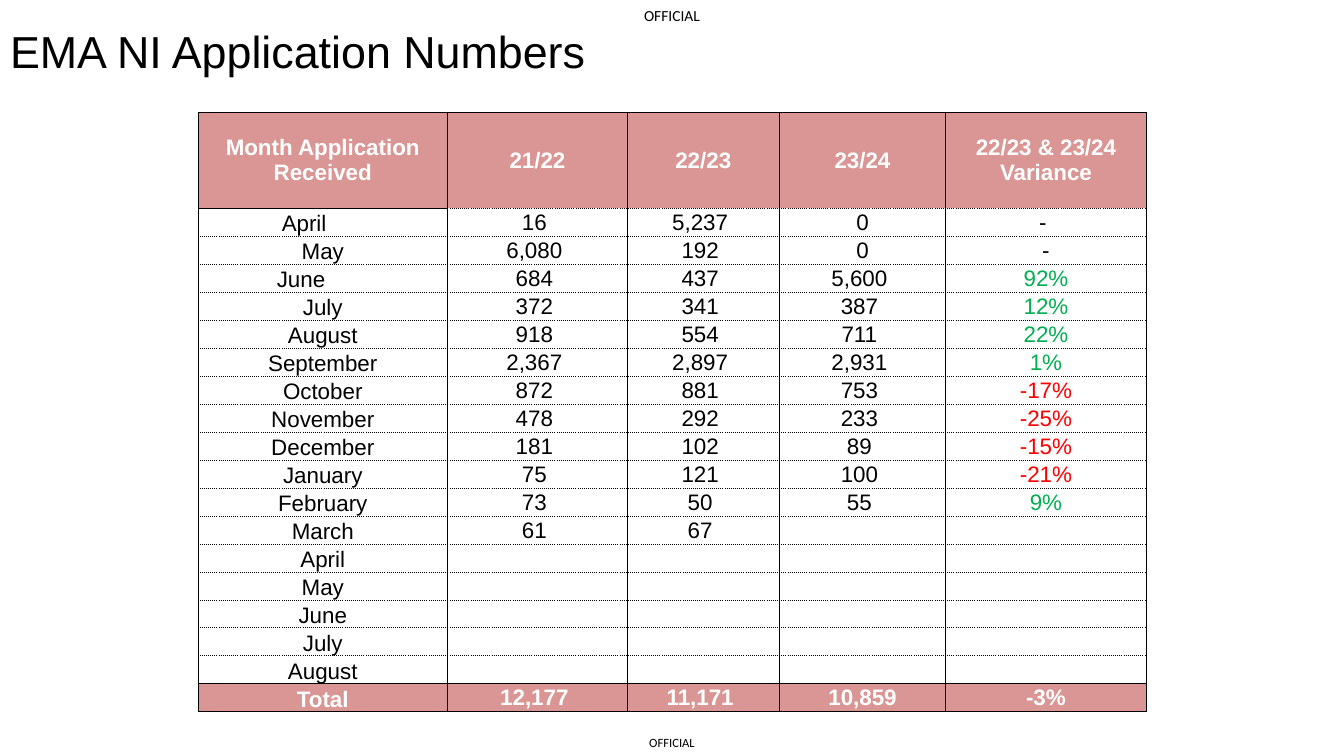
from lxml.etree import SubElement
from pptx import Presentation
from pptx.dml.color import RGBColor
from pptx.enum.text import MSO_ANCHOR as Anchor, MSO_AUTO_SIZE as Fit, PP_ALIGN as Align
from pptx.oxml.ns import qn
from pptx.util import Pt


def style(para, align, bold=False, size=16, name="Arial", hue="000000"):
    para.alignment = align
    for run in para.runs:
        for key, val in {"size": Pt(size), "name": name, "bold": bold}.items():
            setattr(run.font, key, val)
        run.font.color.rgb = RGBColor.from_string(hue)


def edge(cell, side, dash):
    line = SubElement(cell._tc.get_or_add_tcPr(), qn(f"a:ln{side}"), w=str(Pt(0.5)))
    fill = SubElement(line, qn("a:solidFill"))
    SubElement(fill, qn("a:srgbClr"), val="000000")
    SubElement(line, qn("a:prstDash"), val=dash)


deck = Presentation()
deck.slide_width, deck.slide_height = Pt(960), Pt(540)
slide = deck.slides.add_slide(deck.slide_layouts[5])

# Title
title = slide.shapes.title
title.left, title.top, title.width, title.height = Pt(0), Pt(13), Pt(780), Pt(46)
frame = title.text_frame
frame.text = "EMA NI Application Numbers"
frame.auto_size = Fit.NONE
frame.vertical_anchor = Anchor.MIDDLE
style(frame.paragraphs[0], Align.LEFT, size=32)

# Marks at the top and bottom edges
for top, high, size in [(0, 22.3, 11), (520.6, 19.4, 9)]:
    mark = slide.shapes.add_textbox(Pt(448.5), Pt(top), Pt(63), Pt(high))
    frame = mark.text_frame
    frame.text = "OFFICIAL"
    for key in ("margin_left", "margin_top", "margin_right", "margin_bottom"):
        setattr(frame, key, 0)
    frame.word_wrap = True
    frame.vertical_anchor = Anchor.MIDDLE
    style(frame.paragraphs[0], Align.CENTER, size=size, name="Calibri")

# Table data
rows = [
    ["Month Application Received", "21/22", "22/23", "23/24", "22/23 & 23/24 Variance"],
    ["April", "16", "5,237", "0", "-"],
    ["May", "6,080", "192", "0", "-"],
    ["June", "684", "437", "5,600", "92%"],
    ["July", "372", "341", "387", "12%"],
    ["August", "918", "554", "711", "22%"],
    ["September", "2,367", "2,897", "2,931", "1%"],
    ["October", "872", "881", "753", "-17%"],
    ["November", "478", "292", "233", "-25%"],
    ["December", "181", "102", "89", "-15%"],
    ["January", "75", "121", "100", "-21%"],
    ["February", "73", "50", "55", "9%"],
    ["March", "61", "67", "", ""],
    *([month, "", "", "", ""] for month in ("April", "May", "June", "July", "August")),
    ["Total", "12,177", "11,171", "10,859", "-3%"],
]
wides = [178.5, 128.2, 108.7, 118.8, 143.3]
last = len(rows) - 1
# Extra right margin for the cells that sit left of centre
shift = {(1, 0): 26.7, (3, 0): 31.1, (1, 4): 4.45}

# Table frame
table = slide.shapes.add_table(len(rows), len(wides), Pt(141.3), Pt(80.2),
                               Pt(sum(wides)), Pt(68.5 + 20 * last)).table
table.first_row = table.horz_banding = False
for col, wide in zip(table.columns, wides):
    col.width = Pt(wide)
for r, row in enumerate(table.rows):
    row.height = Pt(20 if r else 68.5)

# Cells
for r, row in enumerate(rows):
    for c, text in enumerate(row):
        cell = table.cell(r, c)
        band = r in (0, last)
        count = 0 < c < 4 and r and text not in ("0", "10,859")
        extra = shift.get((r, c), 4.45 if count else 0)
        form = {
            "text": text,
            "margin_left": Pt(0.7),
            "margin_right": Pt(0.7 + extra),
            "margin_top": Pt(0.7),
            "margin_bottom": 0,
            "vertical_anchor": Anchor.BOTTOM if r and not c else Anchor.MIDDLE,
        }
        for key, val in form.items():
            setattr(cell, key, val)

        # Text colour: white on bands, green for a rise, red for a fall
        hue = "000000"
        if band:
            hue = "FFFFFF"
        elif text.endswith("%"):
            hue = "FF0000" if text.startswith("-") else "00B050"
        para = cell.text_frame.paragraphs[0]
        style(para, Align.CENTER, bold=band, hue=hue)
        if not text:
            SubElement(para._p, qn("a:endParaRPr"), sz="1600")

        # Solid sides, dotted rules between the months
        firm_top = band or (r == 1 and c == 0)
        firm_end = r >= last - 1 or (r == 0 and c == 0)
        for side, firm in [("L", True), ("R", True), ("T", firm_top), ("B", firm_end)]:
            edge(cell, side, "solid" if firm else "dot")
        if band:
            cell.fill.solid()
            cell.fill.fore_color.rgb = RGBColor.from_string("D99694")
        else:
            cell.fill.background()

deck.save("out.pptx")
